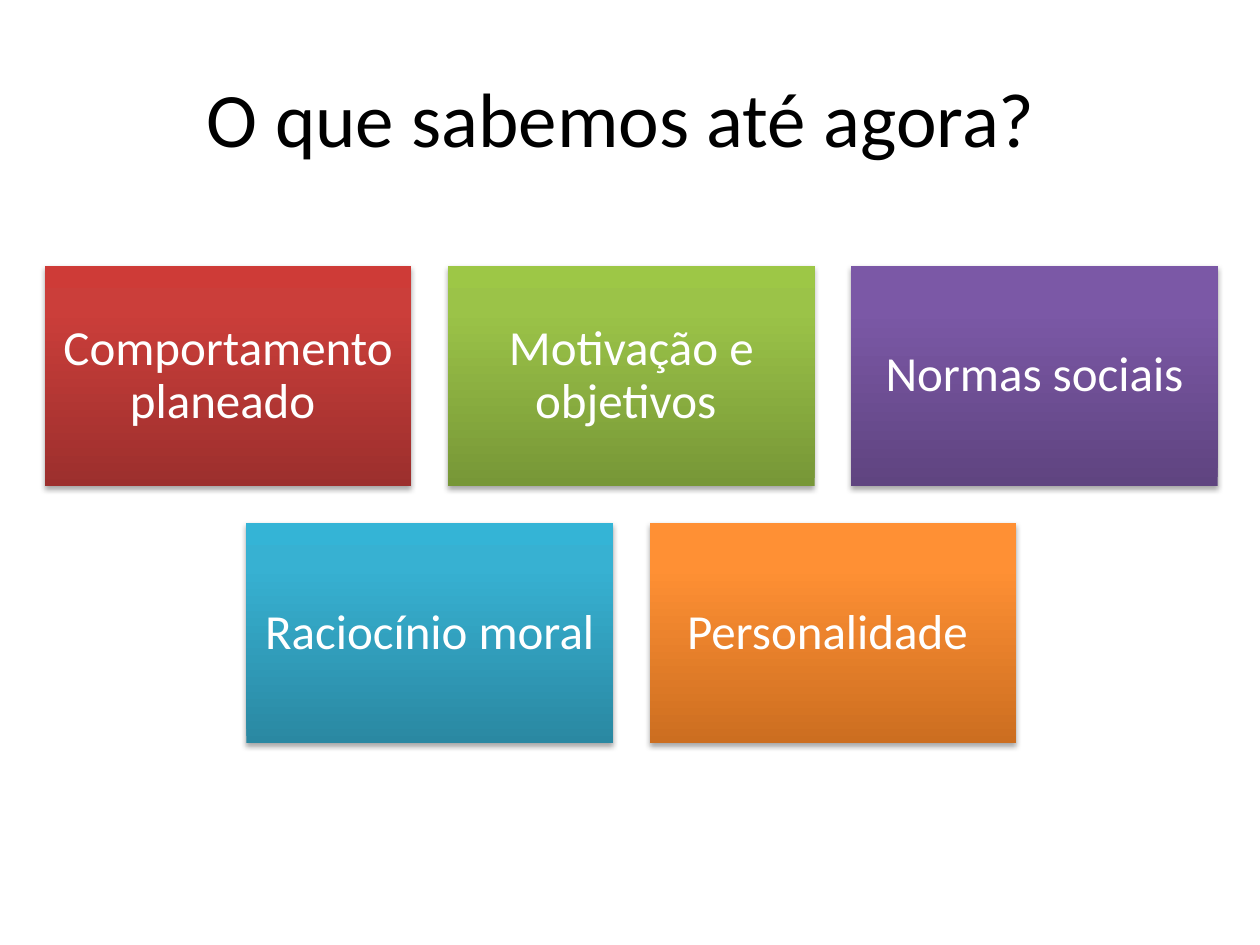
from copy import deepcopy
from dataclasses import dataclass

from lxml import etree
from pptx import Presentation
from pptx.dml.color import RGBColor
from pptx.enum.shapes import MSO_SHAPE
from pptx.enum.text import MSO_ANCHOR, PP_ALIGN
from pptx.oxml.ns import qn
from pptx.util import Inches, Pt

RECTANGLE = MSO_SHAPE.RECTANGLE
MIDDLE = MSO_ANCHOR.MIDDLE
CENTER = PP_ALIGN.CENTER


@dataclass(frozen=True)
class Theme:
    font: str = "Calibri"
    title_size: int = 44
    card_size: int = 28
    title_color: str = "000000"
    card_text: str = "FFFFFF"
    shadow: str = "000000"
    stops: tuple = (0, 80, 100)
    red: tuple = ("9C2F2D", "CB3E3A", "CE3B37")
    green: tuple = ("779737", "9BC348", "9DC746")
    purple: tuple = ("5F4480", "7B58A6", "7C57A8")
    blue: tuple = ("2A88A2", "37B1D2", "34B4D6")
    orange: tuple = ("CC6E20", "FF9034", "FF9136")


class SlideBuilder:
    def __init__(self, slide, theme):
        self.slide = slide
        self.theme = theme

    def add_text(self, shape, text, size, color, margin):
        frame = shape.text_frame
        frame.word_wrap = True
        frame.vertical_anchor = MIDDLE
        frame.margin_left = frame.margin_right = Inches(margin)
        frame.margin_top = frame.margin_bottom = Inches(margin)
        para = frame.paragraphs[0]
        para.alignment = CENTER
        span = para.add_run()
        span.text = text
        span.font.name = self.theme.font
        span.font.size = Pt(size)
        span.font.color.rgb = RGBColor.from_string(color)
        return para

    def title(self, text, left, top, width, height):
        box = self.slide.shapes.add_textbox(
            Inches(left), Inches(top), Inches(width), Inches(height))
        self.add_text(box, text, self.theme.title_size, self.theme.title_color, 0.1)

    def card(self, text, colors, left, top, width, height):
        box = self.slide.shapes.add_shape(
            RECTANGLE, Inches(left), Inches(top), Inches(width), Inches(height))
        self.gradient(box, colors)
        box.line.fill.background()
        self.drop_shadow(box)
        para = self.add_text(
            box, text, self.theme.card_size, self.theme.card_text, 0.12)
        para.line_spacing = 0.9

    def gradient(self, shape, colors):
        """Fill from bottom to top with one colour for each theme stop."""
        fill = shape.fill
        fill.gradient()
        fill.gradient_angle = 90
        stop_list = shape._element.spPr.find(".//" + qn("a:gsLst"))
        stop_list.append(deepcopy(stop_list[-1]))
        for stop, position, color in zip(fill.gradient_stops, self.theme.stops, colors):
            stop.position = position / 100
            stop.color.rgb = RGBColor.from_string(color)

    def drop_shadow(self, shape):
        shape.shadow.inherit = False
        effects = shape._element.spPr.find(qn("a:effectLst"))
        shadow = etree.SubElement(
            effects, qn("a:outerShdw"), blurRad=str(Pt(3.1)), dist=str(Pt(1.8)),
            dir="5400000", rotWithShape="0")
        color = etree.SubElement(shadow, qn("a:srgbClr"), val=self.theme.shadow)
        etree.SubElement(color, qn("a:alpha"), val="35000")

    def card_rows(self, rows, center, top, width, height, gap):
        """Stack rows of equal cards, each row centred on the same axis."""
        for row_index, row in enumerate(rows):
            row_width = len(row) * (width + gap) - gap
            for column, (text, colors) in enumerate(row):
                self.card(text, colors,
                          center - row_width / 2 + column * (width + gap),
                          top + row_index * (height + gap), width, height)


def main():
    deck = Presentation()
    deck.slide_width = Inches(10)
    deck.slide_height = Inches(7.5)
    theme = Theme()
    page = SlideBuilder(deck.slides.add_slide(deck.slide_layouts[6]), theme)

    page.title("O que sabemos até agora? ", 0.5, 0.3, 9, 1.25)
    rows = [
        [("Comportamento planeado ", theme.red),
         ("Motivação e objetivos ", theme.green),
         ("Normas sociais", theme.purple)],
        [("Raciocínio moral ", theme.blue),
         ("Personalidade ", theme.orange)],
    ]
    page.card_rows(rows, center=5.01, top=2.11, width=2.91, height=1.75, gap=0.29)
    deck.save("out.pptx")


if __name__ == "__main__":
    main()
